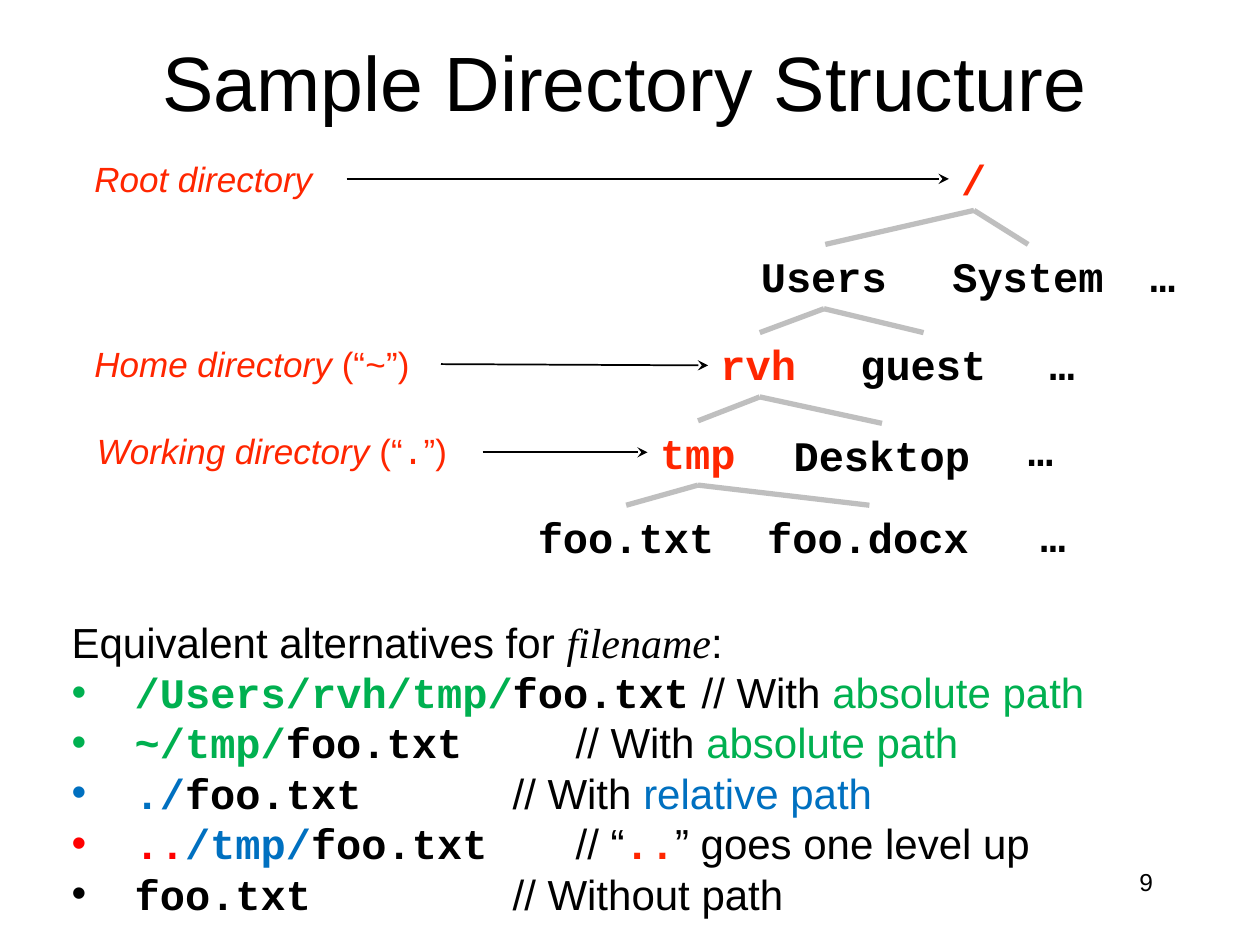
"""Build the slide that explains a sample directory tree and its file paths."""
from lxml import etree
from pptx import Presentation
from pptx.dml.color import RGBColor
from pptx.enum.shapes import MSO_CONNECTOR
from pptx.enum.text import MSO_ANCHOR, MSO_AUTO_SIZE, PP_ALIGN
from pptx.oxml.ns import qn
from pptx.util import Inches, Pt

STRAIGHT = MSO_CONNECTOR.STRAIGHT
TOP, MIDDLE = MSO_ANCHOR.TOP, MSO_ANCHOR.MIDDLE
FIT_SHAPE, FIT_NONE = MSO_AUTO_SIZE.SHAPE_TO_FIT_TEXT, MSO_AUTO_SIZE.NONE
LEFT, CENTER, RIGHT = PP_ALIGN.LEFT, PP_ALIGN.CENTER, PP_ALIGN.RIGHT

BLACK = RGBColor(0x00, 0x00, 0x00)
RED = RGBColor(0xFF, 0x26, 0x00)
PURE_RED = RGBColor(0xFF, 0x00, 0x00)
GREEN = RGBColor(0x00, 0xB0, 0x50)
BLUE = RGBColor(0x00, 0x70, 0xC0)
GRAY = RGBColor(0xBF, 0xBF, 0xBF)

SANS, MONO, SERIF = "Arial", "Courier New", "Times New Roman"

NODES = [
    ("/", 7.53, 1.17, RED),
    ("Users", 5.94, 1.94, BLACK),
    ("System", 7.46, 1.94, BLACK),
    ("…", 9.03, 1.94, BLACK),
    ("rvh", 5.62, 2.64, RED),
    ("guest", 6.73, 2.64, BLACK),
    ("…", 8.23, 2.64, BLACK),
    ("tmp", 5.14, 3.34, RED),
    ("Desktop", 6.2, 3.36, BLACK),
    ("…", 8.06, 3.32, BLACK),
    ("foo.txt", 4.17, 4.01, BLACK),
    ("foo.docx", 5.99, 4.01, BLACK),
    ("…", 8.16, 4, BLACK),
]
BRANCHES = [
    ((7.73, 1.67), [(6.55, 1.94), (8.16, 1.94)]),
    ((6.54, 2.45), [(6.03, 2.64), (7.33, 2.64)]),
    ((6.03, 3.15), [(5.54, 3.34), (7, 3.36)]),
    ((5.54, 3.85), [(4.97, 4.01), (6.9, 4.01)]),
]
ARROWS = [
    ((2.75, 1.42), (7.53, 1.42)),
    ((3.5, 2.89), (5.62, 2.9)),
    ((3.83, 3.59), (5.14, 3.59)),
]
LABELS = [
    ("Root directory", "", 0.65, 1.2, 1.95),
    ("Home directory ", "~", 0.65, 2.67, 2.72),
    ("Working directory ", ".", 0.67, 3.36, 3),
]


def plain(text, color=BLACK):
    """Describe a sans-serif span."""
    return text, SANS, color, False, False


def code(text, color=BLACK):
    """Describe a bold monospaced span."""
    return text, MONO, color, True, False


INTRO = [plain("Equivalent alternatives for "),
         ("filename", SERIF, BLACK, False, True), plain(":")]
PATHS = [
    [code("/Users/rvh/tmp/", GREEN), code("foo.txt\t"),
     plain("// With "), plain("absolute path", GREEN)],
    [code("~/tmp/", GREEN), code("foo.txt\t\t"),
     plain("// With "), plain("absolute path", GREEN)],
    [code("./", BLUE), code("foo.txt\t\t\t"),
     plain("// With "), plain("relative path", BLUE)],
    [code("..", PURE_RED), code("/tmp/", BLUE), code("foo.txt\t\t"),
     plain("// “"), code("..", RED), plain("” goes one level up")],
    [code("foo.txt\t\t\t\t"), plain("// Without path")],
]


def add_spans(para, spans, size):
    """Add each span to the paragraph as its own run."""
    for text, font, color, bold, italic in spans:
        span = para.add_run()
        span.text = text
        span.font.name = font
        span.font.size = Pt(size)
        span.font.color.rgb = color
        span.font.bold = bold
        span.font.italic = italic


def add_text(page, area, lines, size, align=LEFT, anchor=TOP, wrap=False):
    """Add a text box with one paragraph per line and return its paragraphs."""
    box = page.shapes.add_textbox(*(Inches(length) for length in area))
    frame = box.text_frame
    frame.word_wrap = wrap
    frame.auto_size = FIT_NONE if wrap else FIT_SHAPE
    frame.vertical_anchor = anchor
    for index, spans in enumerate(lines):
        para = frame.add_paragraph() if index else frame.paragraphs[0]
        para.alignment = align
        add_spans(para, spans, size)
    return frame.paragraphs


def add_bullet(para):
    """Give the paragraph a hanging round bullet."""
    props = para._p.get_or_add_pPr()
    props.set("marL", str(Inches(0.5)))
    props.set("indent", str(Inches(-0.5)))
    etree.SubElement(props, qn("a:buFont")).set("typeface", SANS)
    etree.SubElement(props, qn("a:buChar")).set("char", "•")


def add_line(page, start, end, color, width, arrow=False):
    """Add a straight connector, with a stealth head if it is an arrow."""
    points = (Inches(length) for length in (*start, *end))
    line = page.shapes.add_connector(STRAIGHT, *points)
    line.line.color.rgb = color
    line.line.width = Pt(width)
    if arrow:
        outline = line.line._get_or_add_ln()
        etree.SubElement(outline, qn("a:tailEnd")).set("type", "stealth")
    etree.SubElement(line._element.spPr, qn("a:effectLst"))


def add_label(page, name, symbol, left, top, width):
    """Add a red directory label with its shorthand symbol, if any."""
    spans = [(name, SANS, RED, False, True)]
    if symbol:
        spans += [plain("(“", RED), (symbol, MONO, RED, False, False),
                  plain("”)", RED)]
    add_text(page, (left, top, width, 0.44), [spans], 20)


def add_tree(page):
    """Add the directory names and the branches between them."""
    for name, left, top, color in NODES:
        width = 0.2 + 0.2 * len(name)
        add_text(page, (left, top, width, 0.5), [[code(name, color)]], 24)
    for parent, children in BRANCHES:
        for child in children:
            add_line(page, parent, child, GRAY, 3)


def main():
    """Build and save the deck."""
    deck = Presentation()
    deck.slide_width, deck.slide_height = Inches(10), Inches(7.5)
    page = deck.slides.add_slide(deck.slide_layouts[6])
    add_text(page, (0.75, 0, 8.42, 1.28),
             [[plain("Sample Directory Structure")]], 44, CENTER, MIDDLE, True)
    add_text(page, (7.17, 6.83, 2.08, 0.5), [[plain("9")]], 14, RIGHT, wrap=True)
    add_tree(page)
    for label in LABELS:
        add_label(page, *label)
    for start, end in ARROWS:
        add_line(page, start, end, BLACK, 1, arrow=True)
    paras = add_text(page, (0.47, 4.84, 8.89, 2.52), [INTRO, *PATHS], 24)
    for para in paras[1:]:
        add_bullet(para)
    deck.save("out.pptx")


if __name__ == "__main__":
    main()
